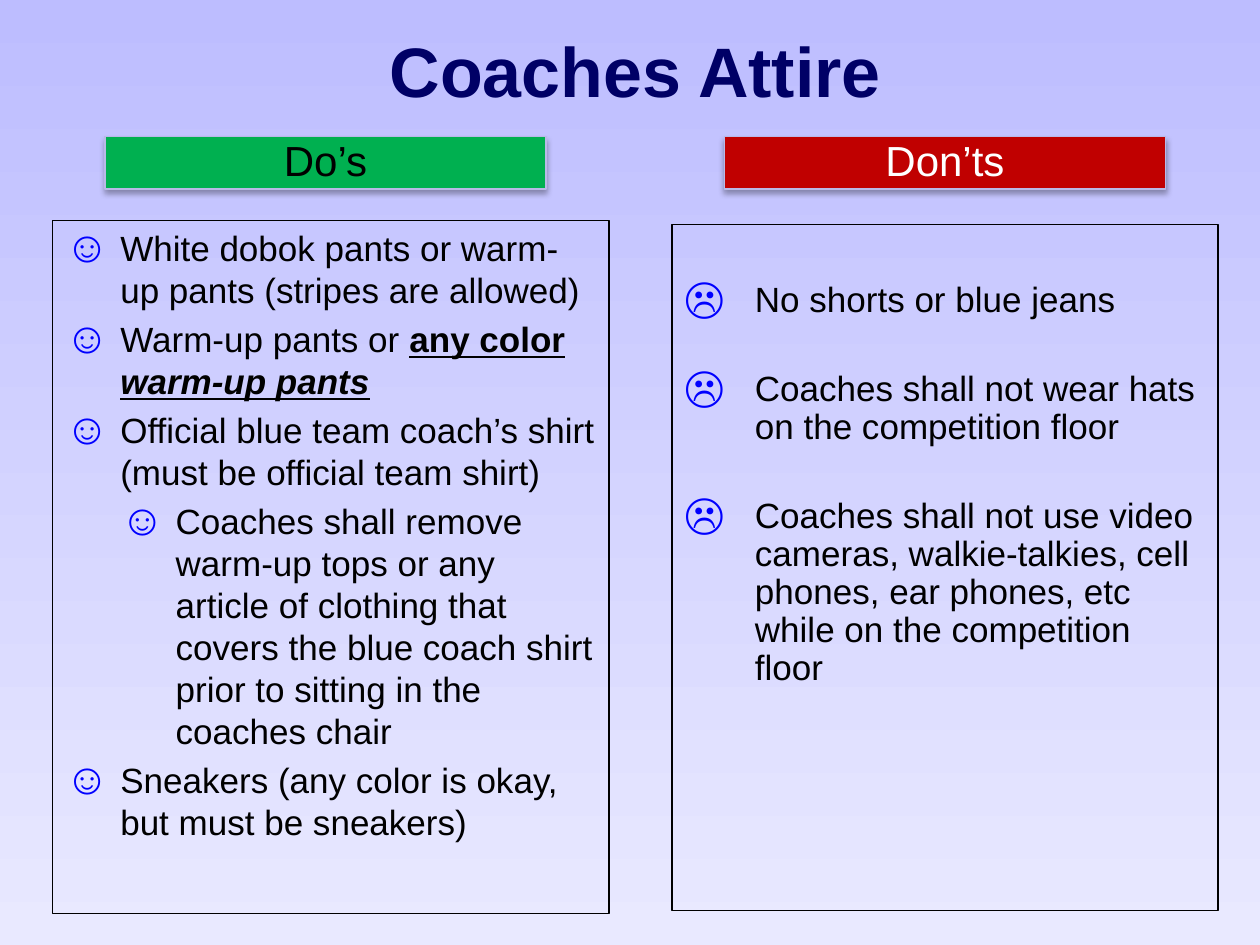
from lxml import etree
from pptx import Presentation
from pptx.dml.color import RGBColor
from pptx.enum.shapes import MSO_SHAPE
from pptx.enum.text import MSO_ANCHOR, PP_ALIGN
from pptx.oxml.ns import qn
from pptx.util import Inches, Pt

RECTANGLE = MSO_SHAPE.RECTANGLE
TOP, MIDDLE, BOTTOM = MSO_ANCHOR.TOP, MSO_ANCHOR.MIDDLE, MSO_ANCHOR.BOTTOM
LEFT, CENTER = PP_ALIGN.LEFT, PP_ALIGN.CENTER

COLORS = {
    "sky": "BDBDFF", "haze": "E9E9FF", "navy": "000066", "blue": "0000FF",
    "green": "00B050", "red": "C00000", "edge": "B9B9E7",
    "black": "000000", "white": "FFFFFF",
}
COLUMNS, ROWS = 120, 90


def rgb(name):
    return RGBColor.from_string(COLORS[name])


class AttireSlide:
    """Holds the style and the current slide; lengths are grid columns and rows."""

    font = "Arial"
    body_size = 20

    def __init__(self, deck):
        self.deck = deck
        self.slide = deck.slides.add_slide(deck.slide_layouts[6])

    def area(self, column, row, columns, rows):
        cell_width = self.deck.slide_width / COLUMNS
        cell_height = self.deck.slide_height / ROWS
        return (round(column * cell_width), round(row * cell_height),
                round(columns * cell_width), round(rows * cell_height))

    def background(self, top, bottom):
        fill = self.slide.background.fill
        fill.gradient()
        fill.gradient_angle = 270
        for stop, name in zip(fill.gradient_stops, (top, bottom)):
            stop.color.rgb = rgb(name)

    def span(self, para, text, size, color, bold=False, italic=False, underline=False):
        span = para.add_run()
        span.text = text
        font = span.font
        font.name, font.size, font.color.rgb = self.font, Pt(size), rgb(color)
        font.bold, font.italic, font.underline = bold, italic, underline

    def title(self, text, area):
        box = self.slide.shapes.add_textbox(*self.area(*area))
        box.text_frame.word_wrap = True
        box.text_frame.vertical_anchor = BOTTOM
        para = box.text_frame.paragraphs[0]
        para.alignment = CENTER
        self.span(para, text, 40, "navy", bold=True)

    def rectangle(self, area, line, anchor):
        box = self.slide.shapes.add_shape(RECTANGLE, *self.area(*area))
        box.shadow.inherit = False
        box.fill.background()
        box.line.color.rgb = rgb(line)
        box.line.width = Pt(0.75)
        box.text_frame.word_wrap = True
        box.text_frame.vertical_anchor = anchor
        return box

    def drop_shadow(self, box):
        effects = box._element.spPr.find(qn("a:effectLst"))
        shadow = etree.SubElement(
            effects, qn("a:outerShdw"), blurRad=str(Pt(3.5)), dist=str(Pt(2.2)),
            dir="5400000", algn="t", rotWithShape="0")
        color = etree.SubElement(shadow, qn("a:srgbClr"), val=COLORS["black"])
        etree.SubElement(color, qn("a:alpha"), val="32000")

    def header(self, text, area, fill, color):
        box = self.rectangle(area, "edge", MIDDLE)
        box.fill.solid()
        box.fill.fore_color.rgb = rgb(fill)
        self.drop_shadow(box)
        para = box.text_frame.paragraphs[0]
        para.alignment = CENTER
        para.line_spacing = 0.9
        self.span(para, text, 24, color)

    def bullet(self, para, mark, margin, hanging):
        properties = para._p.get_or_add_pPr()
        properties.set("marL", str(Inches(margin)))
        properties.set("indent", str(-Inches(hanging)))
        color = etree.SubElement(properties, qn("a:buClr"))
        etree.SubElement(color, qn("a:srgbClr"), val=COLORS["blue"])
        etree.SubElement(properties, qn("a:buSzPct"), val="125000")
        etree.SubElement(properties, qn("a:buFont"), typeface=self.font)
        etree.SubElement(properties, qn("a:buChar"), char=mark)

    def rules(self, items, area, mark, hanging, line_height, gap, top_inset=0.05):
        """Fill a box with items, each a depth and its list of (text, style) spans."""
        box = self.rectangle(area, "black", TOP)
        frame = box.text_frame
        frame.margin_top = Inches(top_inset)
        for index, (depth, spans) in enumerate(items):
            para = frame.add_paragraph() if index else frame.paragraphs[0]
            self.bullet(para, mark, hanging * (depth + 1), hanging)
            para.alignment = LEFT
            para.line_spacing = Pt(line_height)
            para.space_before = Pt(gap if index else 0)
            for text, style in spans:
                self.span(para, text, self.body_size, "black", **style)


DOS = [
    (0, [("White dobok pants or warm-up pants (stripes are allowed)", {})]),
    (0, [("Warm-up pants or ", {}),
         ("any color", {"bold": True, "underline": True}),
         (" ", {"underline": True}),
         ("warm-up pants", {"bold": True, "italic": True, "underline": True})]),
    (0, [("Official blue team coach’s shirt (must be official team shirt)", {})]),
    (1, [("Coaches shall remove warm-up tops or any article of clothing that covers "
          "the blue coach shirt prior to sitting in the coaches chair", {})]),
    (0, [("Sneakers (any color is okay, but must be sneakers)", {})]),
]
DONTS = [
    (0, [("No shorts or blue jeans", {})]),
    (0, [("Coaches shall not wear hats on the competition floor", {})]),
    (0, [("Coaches shall not use video cameras, walkie-talkies, cell phones, "
          "ear phones, etc while on the competition floor", {})]),
]


def main():
    deck = Presentation()
    deck.slide_width, deck.slide_height = Inches(10), Inches(7.5)
    page = AttireSlide(deck)
    page.background("sky", "haze")
    page.title("Coaches Attire", (5, 1, 111, 10.2))
    page.header("Do’s", (10, 13, 42, 5), "green", "black")
    page.header("Don’ts", (69, 13, 42, 5), "red", "white")
    page.rules(DOS, (5, 21, 53, 66), "☺", 0.44, line_height=24, gap=4)
    page.rules(DONTS, (64, 21.4, 52, 65.3), "☹", 0.56,
               line_height=21.6, gap=29.5, top_inset=0.45)
    deck.save("out.pptx")


if __name__ == "__main__":
    main()
